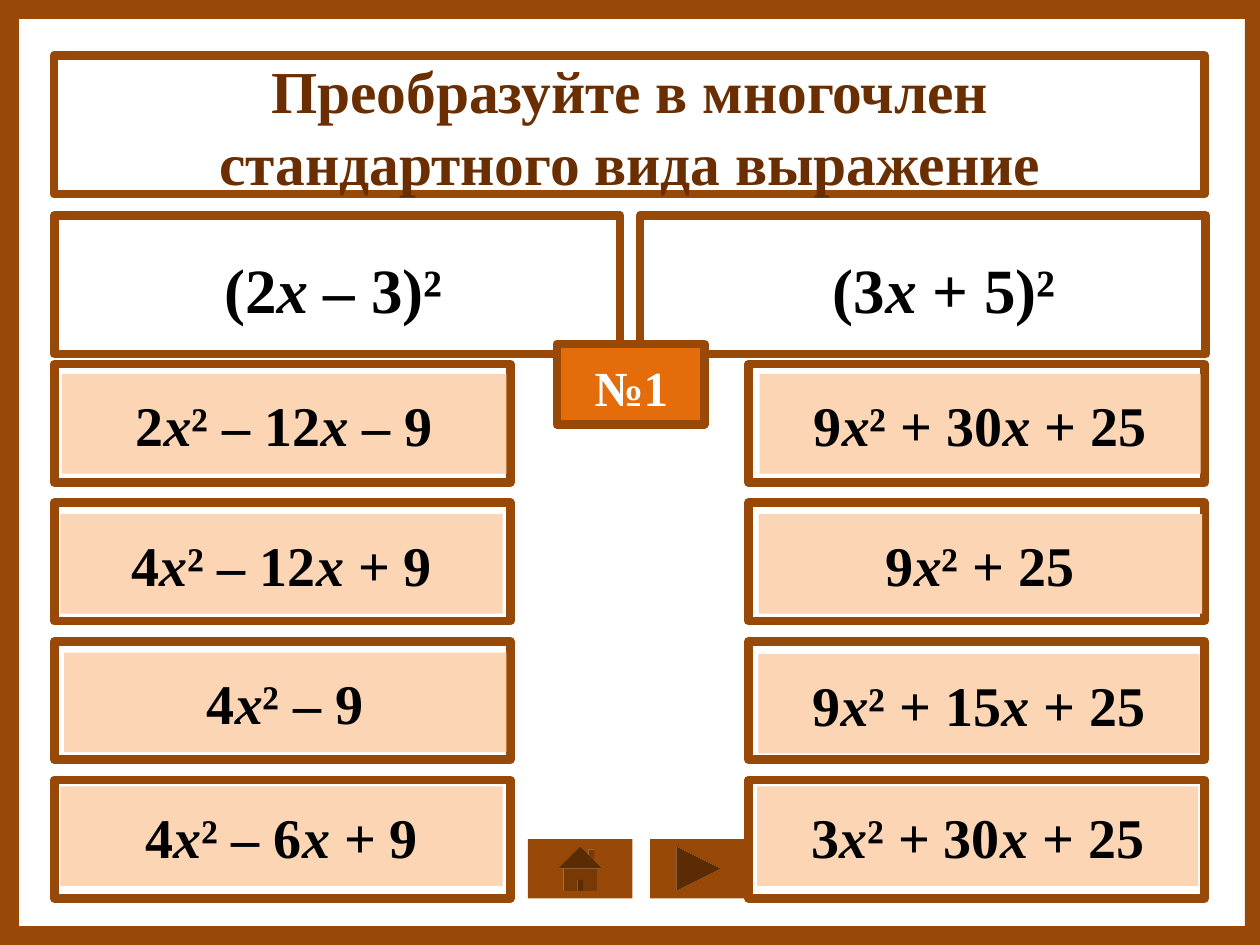
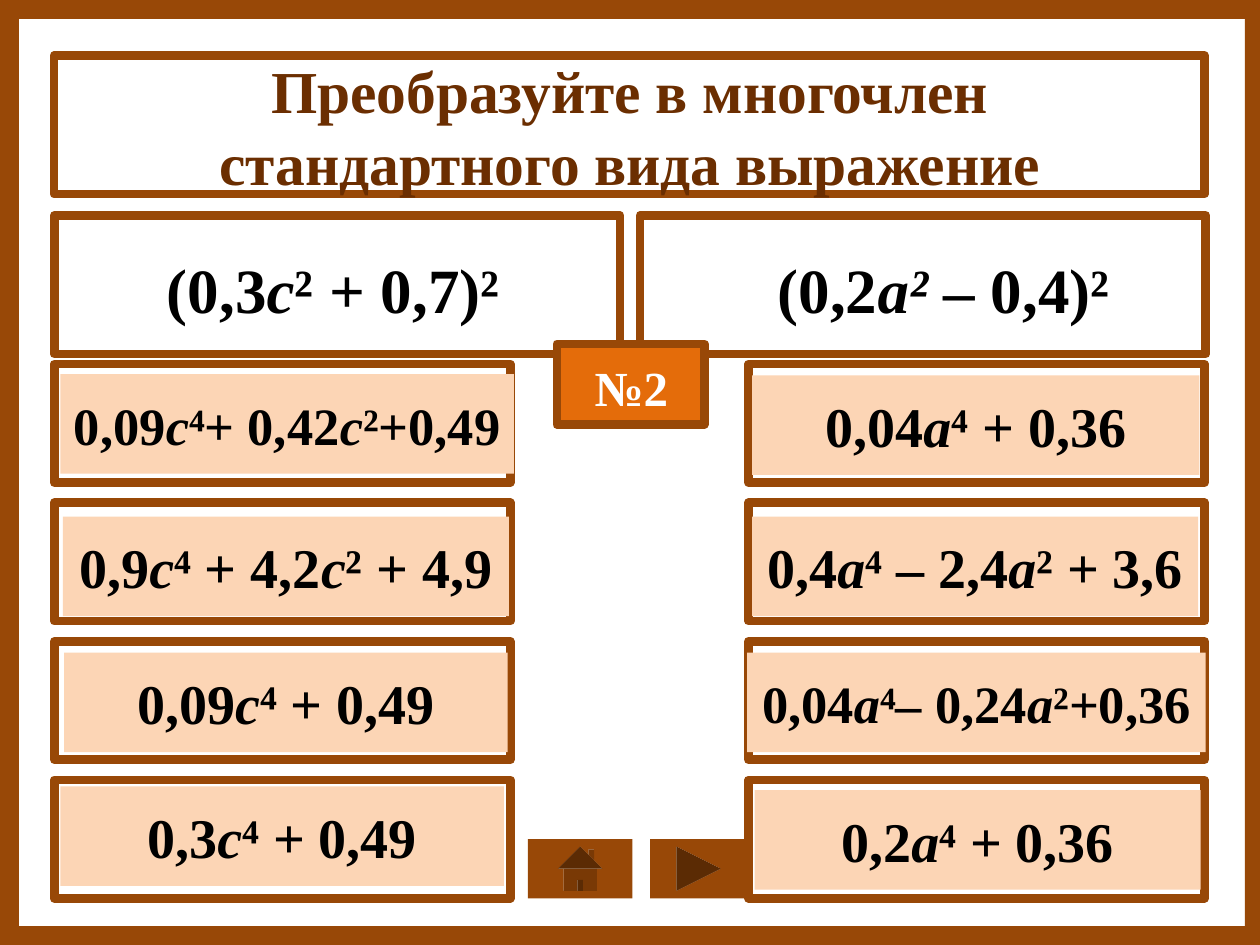
"""Build two algebra quiz slides with a shared frame, answer panels and navigation buttons."""
from pptx import Presentation
from pptx.dml.color import RGBColor
from pptx.enum.shapes import MSO_SHAPE as SHAPE
from pptx.enum.text import MSO_ANCHOR as ANCHOR, MSO_AUTO_SIZE as AUTO, PP_ALIGN as ALIGN
from pptx.util import Inches, Pt

FONT = "Times New Roman"
BROWN, TITLE_BROWN, ORANGE = "984807", "6B2E01", "E46C0A"
PEACH, WHITE, BLACK = "FCD5B5", "FFFFFF", "000000"
TITLE = ["Преобразуйте в многочлен", "стандартного вида выражение"]
TILE_HEIGHT = 0.79

QUIZZES = [
    {
        "number": "№1",
        "questions": [
            ("(2*х* – 3)²", 1.67, 1.95),
            ("(3*х *+ 5)²", 6.5, 1.99),
        ],
        "answers": [
            ("2*х*² – 12*х *– 9", 0.49, 2.97, 3.53, 32),
            ("4*х*² – 12*х *+ 9", 0.48, 4.08, 3.51, 32),
            ("4*х*² – 9", 0.51, 5.18, 3.51, 32),
            ("4*х*² – 6*х *+ 9", 0.48, 6.24, 3.51, 32),
            ("9*х*² + 30*х *+ 25", 6.03, 2.97, 3.5, 32),
            ("9*х*² + 25", 6.02, 4.08, 3.52, 32),
            ("9*х*² + 15*х *+ 25", 6.02, 5.19, 3.5, 32),
            ("3*х*² + 30*х *+ 25", 6.01, 6.24, 3.5, 32),
        ],
    },
    {
        "number": "№2",
        "questions": [
            ("(0,3*с*² + 0,7)²", 1.21, 2.87),
            ("(0,2*а² *– 0,4)²", 6.06, 2.86),
        ],
        "answers": [
            ("0,09*с*⁴+ 0,42*с*²+0,49", 0.48, 2.97, 3.6, 30),
            ("0,9*с*⁴ + 4,2*с*² + 4,9", 0.5, 4.1, 3.54, 32),
            ("0,09*с*⁴ + 0,49", 0.51, 5.18, 3.52, 32),
            ("0,3*с*⁴ + 0,49", 0.48, 6.24, 3.52, 32),
            ("0,04*а*⁴ + 0,36", 5.97, 2.98, 3.55, 32),
            ("0,4*а*⁴ – 2,4*а*² + 3,6", 5.97, 4.1, 3.54, 32),
            ("0,04*а*⁴– 0,24*а*²+0,36", 5.93, 5.18, 3.64, 30),
            ("0,2*а*⁴ + 0,36", 5.99, 6.27, 3.54, 32),
        ],
    },
]


def rgb(color):
    return RGBColor.from_string(color)


def add_block(s, kind, left, top, width, height, fill, line=None):
    sp = s.shapes.add_shape(kind, Inches(left), Inches(top), Inches(width), Inches(height))
    sp.shadow.inherit = False
    sp.fill.solid()
    sp.fill.fore_color.rgb = rgb(fill)
    if line:
        sp.line.color.rgb = rgb(line)
        sp.line.width = Pt(5)
    else:
        sp.line.fill.background()
    return sp


def add_runs(p, text, size, color):
    for i, part in enumerate(text.split("*")):
        if part:
            r = p.add_run()
            r.text = part
            r.font.name = FONT
            r.font.size = Pt(size)
            r.font.bold = True
            r.font.italic = i % 2 == 1
            r.font.color.rgb = rgb(color)


def add_label(s, text, left, top, width, height, size, color, align):
    sp = s.shapes.add_textbox(Inches(left), Inches(top), Inches(width), Inches(height))
    tf = sp.text_frame
    tf.word_wrap = False
    tf.auto_size = AUTO.SHAPE_TO_FIT_TEXT
    p = tf.paragraphs[0]
    p.alignment = align
    add_runs(p, text, size, color)


def add_answer(s, text, left, top, width, size):
    sp = add_block(s, SHAPE.RECTANGLE, left, top, width, TILE_HEIGHT, PEACH)
    tf = sp.text_frame
    tf.vertical_anchor = ANCHOR.MIDDLE
    p = tf.paragraphs[0]
    p.alignment = ALIGN.CENTER
    add_runs(p, text, size, BLACK)


def fill_title(s):
    sp = s.shapes.title
    sp.left, sp.top, sp.width, sp.height = Inches(0.44), Inches(0.37), Inches(9.12), Inches(1.25)
    tf = sp.text_frame
    tf.word_wrap = True
    tf.auto_size = AUTO.NONE
    tf.vertical_anchor = ANCHOR.TOP
    for i, line in enumerate(TITLE):
        p = tf.add_paragraph() if i else tf.paragraphs[0]
        p.alignment = ALIGN.CENTER
        p.line_spacing = Pt(41.4)
        add_runs(p, line, 34, TITLE_BROWN)


def draw_backdrop(s, layout):
    panels = [(0.43, 0.44, 9.13, 1.1), (0.43, 1.71, 4.49, 1.1), (5.08, 1.71, 4.49, 1.1)]
    panels += [(left, 2.89 + 1.1 * row, 3.62, 0.94) for left in (0.43, 5.94) for row in range(4)]
    blocks = [add_block(s, SHAPE.RECTANGLE, *panel, WHITE, BROWN) for panel in panels]
    blocks.append(add_block(s, SHAPE.RECTANGLE, 4.42, 2.73, 1.17, 0.64, ORANGE, BROWN))
    frame = add_block(s, SHAPE.FRAME, 0, 0, 10.03, 7.5, BROWN)
    frame.adjustments[0] = 0.02
    blocks.append(frame)
    for i, sp in enumerate(blocks):
        sp._element.nvSpPr.cNvPr.id = 100 + i
        layout.shapes._spTree.append(sp._element)


def fill_quiz(s, quiz):
    fill_title(s)
    add_label(s, quiz["number"], 4.62, 2.79, 0.79, 0.57, 28, WHITE, ALIGN.LEFT)
    add_block(s, SHAPE.ACTION_BUTTON_FORWARD_OR_NEXT, 5.16, 6.66, 0.77, 0.47, BROWN)
    add_block(s, SHAPE.ACTION_BUTTON_HOME, 4.19, 6.66, 0.83, 0.47, BROWN)
    for text, left, width in quiz["questions"]:
        add_label(s, text, left, 1.94, width, 0.71, 36, BLACK, ALIGN.CENTER)
    for answer in quiz["answers"]:
        add_answer(s, *answer)


def main():
    prs = Presentation()
    prs.slide_width, prs.slide_height = Inches(10), Inches(7.5)
    layout = prs.slide_layouts[5]
    slides = [prs.slides.add_slide(layout) for _ in QUIZZES]
    draw_backdrop(slides[0], layout)
    for s, quiz in zip(slides, QUIZZES):
        fill_quiz(s, quiz)
    prs.save("out.pptx")


if __name__ == "__main__":
    main()
